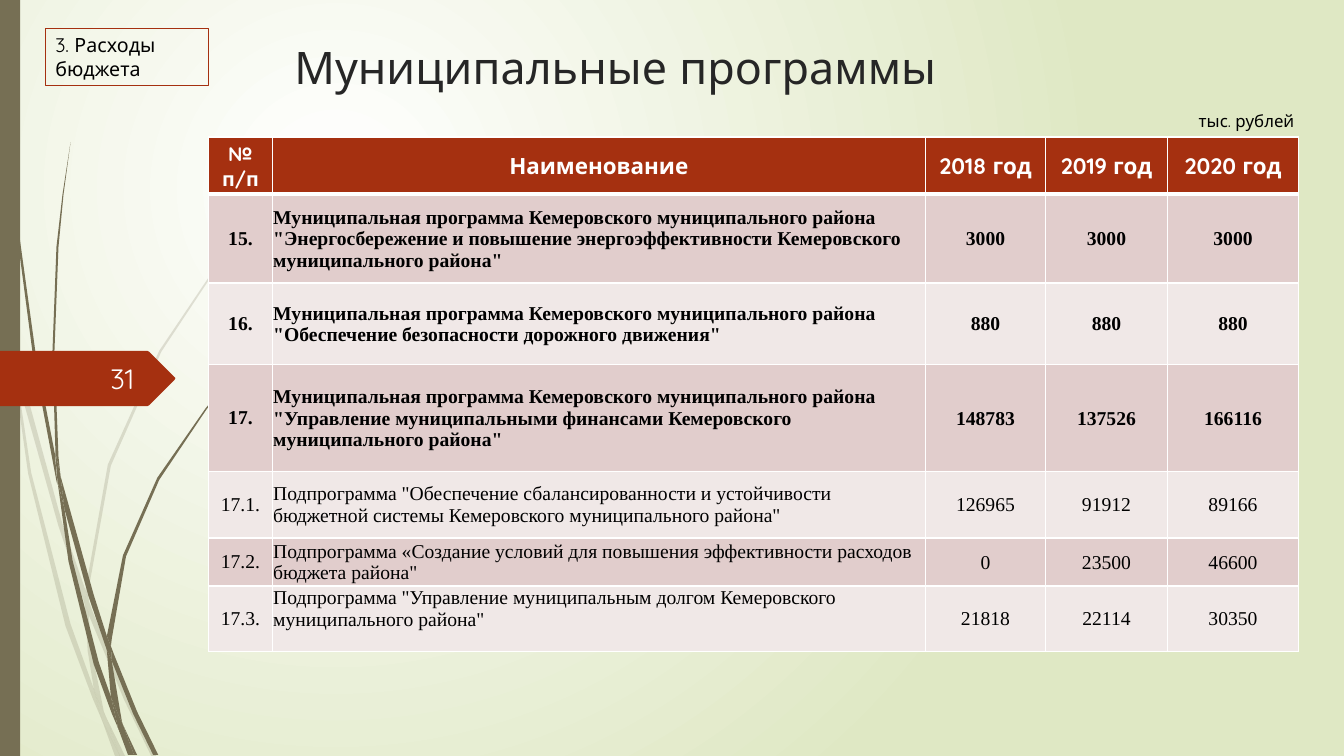
from dataclasses import dataclass

from pptx import Presentation
from pptx import util as u
from pptx.dml.color import RGBColor
from pptx.enum import shapes, text
from pptx.oxml import parse_xml
from pptx.oxml.ns import nsdecls, qn

RUST = RGBColor(0xA5, 0x30, 0x10)
OLIVE = RGBColor(0x76, 0x6F, 0x54)
PALE_GREEN = RGBColor(0xDF, 0xE8, 0xC4)
DARK_BAND = RGBColor(0xE1, 0xCD, 0xCC)
LIGHT_BAND = RGBColor(0xF0, 0xE8, 0xE7)
TITLE_GRAY = RGBColor(0x26, 0x26, 0x26)
WHITE = RGBColor(0xFF, 0xFF, 0xFF)
BLACK = RGBColor(0, 0, 0)
HEADING_FONT, TABLE_FONT = "Quicksand", "Times New Roman"
LEFT, CENTER, RIGHT = text.PP_ALIGN.LEFT, text.PP_ALIGN.CENTER, text.PP_ALIGN.RIGHT
TOP, MIDDLE = text.MSO_ANCHOR.TOP, text.MSO_ANCHOR.MIDDLE
Points = list[tuple[float, float]]


@dataclass
class Style:
    size: float
    color: RGBColor = BLACK
    font: str = HEADING_FONT
    bold: bool = False
    align: text.PP_ALIGN = LEFT
    anchor: text.MSO_ANCHOR = TOP


@dataclass
class Box:
    left: float
    top: float
    width: float
    height: float

    def lengths(self) -> list[u.Length]:
        return [u.Inches(n) for n in (self.left, self.top, self.width, self.height)]


@dataclass
class Grass:
    """A tuft of grass: the outlines of its blade sections and their opacity."""
    sections: list[Points]
    opacity: int = 100


@dataclass
class Program:
    number: str
    name: str
    amounts: tuple[str, str, str]
    height: float
    bold: bool = False
    name_anchor: text.MSO_ANCHOR = MIDDLE


FAINT_GRASS = Grass([
    [(0.11, 3.5), (0.09, 3.22), (0, 2.82), (0, 2.99), (0.1, 3.44)],
    [(0.58, 5.22), (0.84, 5.99), (0.85, 5.86), (0.62, 5.2), (0.14, 3.45), (0.17, 3.76)],
    [(0.92, 6.07), (0.88, 5.96), (0.88, 6.1), (1.23, 6.94), (1.5, 7.5), (1.55, 7.5), (1.27, 6.92)],
    [(1.19, 7.5), (1.24, 7.5), (1.05, 7.11)],
    [(0.93, 6.83), (0.7, 6.19), (0.31, 4.69), (0.17, 3.76), (0.11, 3.5), (0.28, 4.7),
     (0.65, 6.21), (0.92, 6.93), (1.01, 7.14), (0.99, 7.07)],
    [(0.84, 5.99), (0.87, 6.46), (0.93, 6.83), (0.96, 6.92), (1.05, 7.11), (1.03, 7.06),
     (0.91, 6.46), (0.88, 6.1), (0.88, 6.08)],
    [(0.88, 5.84), (1.1, 4.62), (1.6, 3.49), (2.29, 2.45), (2.68, 1.98), (2.9, 1.75), (3.12, 1.54),
     (3.12, 1.53), (2.89, 1.75), (2.68, 1.97), (2.28, 2.44), (1.58, 3.48), (1.07, 4.61),
     (0.85, 5.84), (0.85, 5.86), (0.88, 5.96)],
    [(1.01, 7.14), (1.14, 7.5), (1.19, 7.5)],
    [(0.88, 6.08), (0.88, 6.1), (0.88, 5.96), (0.85, 5.86), (0.84, 5.99)],
    [(0.96, 6.92), (0.93, 6.83), (0.99, 7.07), (1.01, 7.14), (1.19, 7.5), (1.05, 7.11)],
], 20)
DARK_GRASS = Grass([
    [(0.07, 1.1), (0.17, 2.33), (0.33, 3.55), (0.56, 4.77), (0.57, 4.81), (0.55, 4.57), (0.55, 4.53),
     (0.36, 3.55), (0.19, 2.32), (0.08, 1.09), (0.05, 0.48), (0.04, 0), (0.03, 0), (0.04, 0.48)],
    [(0.88, 5.92), (1.06, 6.45), (1.06, 6.33), (1.06, 6.31), (0.93, 5.9), (0.6, 4.72), (0.64, 5.05)],
    [(1.13, 6.49), (1.1, 6.41), (1.11, 6.56), (1.32, 7.08), (1.52, 7.49), (1.57, 7.49), (1.36, 7.06)],
    [(1.1, 6.91), (0.98, 6.57), (0.72, 5.56), (0.64, 5.05), (0.57, 4.77), (0.68, 5.57),
     (0.93, 6.59), (1.11, 7.08), (1.17, 7.22), (1.16, 7.17)],
    [(0.6, 4.72), (0.58, 4.53), (0.54, 3.49), (0.58, 2.45), (0.63, 1.93), (0.7, 1.41),
     (0.62, 1.93), (0.56, 2.45), (0.52, 3.49), (0.55, 4.49)],
    [(1.33, 7.49), (1.36, 7.49), (1.22, 7.19)],
    [(0.57, 4.77), (0.64, 5.05), (0.6, 4.72), (0.55, 4.49), (0.55, 4.53)],
    [(1.11, 6.33), (1.25, 5.52), (1.58, 4.76), (2.05, 4.06), (2.31, 3.74), (2.61, 3.44), (2.6, 3.44),
     (2.31, 3.73), (2.04, 4.05), (1.56, 4.74), (1.22, 5.51), (1.06, 6.31), (1.1, 6.41)],
    [(1.17, 7.22), (1.27, 7.49), (1.31, 7.49)],
    [(1.06, 6.45), (1.1, 6.91), (1.16, 7.06), (1.22, 7.19), (1.21, 7.16), (1.11, 6.56), (1.09, 6.51)],
    [(1.06, 6.45), (1.09, 6.51), (1.11, 6.56), (1.1, 6.41), (1.06, 6.31), (1.06, 6.33)],
    [(1.16, 7.06), (1.1, 6.91), (1.16, 7.17), (1.17, 7.22), (1.3, 7.49), (1.33, 7.49), (1.22, 7.19)],
])
PAGE_TAG = [(0, 3.48), (1.46, 3.48), (1.48, 3.49), (1.73, 3.74), (1.74, 3.75),
            (1.73, 3.77), (1.48, 4.02), (1.46, 4.03), (0, 4.03)]

HEADERS = ["№ п/п", "Наименование", "2018 год", "2019 год", "2020 год"]
HEADER_HEIGHT = 0.41
COLUMN_WIDTHS = [0.63, 6.48, 1.19, 1.21, 1.3]
MUNICIPAL = "Муниципальная программа Кемеровского муниципального района "
PROGRAMS = [
    Program("15.", MUNICIPAL + '"Энергосбережение и повышение энергоэффективности Кемеровского '
            'муниципального района"', ("3000", "3000", "3000"), 0.88, True),
    Program("16.", MUNICIPAL + '"Обеспечение безопасности дорожного движения"',
            ("880", "880", "880"), 0.81, True),
    Program("17.", MUNICIPAL + '"Управление муниципальными финансами Кемеровского '
            'муниципального района"', ("148783", "137526", "166116"), 1.06, True),
    Program("17.1.", 'Подпрограмма "Обеспечение сбалансированности и устойчивости бюджетной '
            'системы Кемеровского муниципального района"', ("126965", "91912", "89166"), 0.66),
    Program("17.2.", 'Подпрограмма «Создание условий для повышения эффективности расходов '
            'бюджета района"', ("0", "23500", "46600"), 0.24),
    Program("17.3.", 'Подпрограмма "Управление муниципальным долгом Кемеровского '
            'муниципального района"', ("21818", "22114", "30350"), 0.65, name_anchor=TOP),
]


def write(frame, words: str, style: Style) -> None:
    frame.word_wrap = True
    frame.vertical_anchor = style.anchor
    paragraph = frame.paragraphs[0]
    paragraph.alignment = style.align
    run = paragraph.add_run()
    run.text = words
    run.font.name, run.font.size, run.font.bold = style.font, u.Pt(style.size), style.bold
    run.font.color.rgb = style.color


def add_text(slide, box: Box, words: str, style: Style, grow: bool = False):
    shape = slide.shapes.add_textbox(*box.lengths())
    write(shape.text_frame, words, style)
    if grow:
        shape.text_frame.auto_size = text.MSO_AUTO_SIZE.SHAPE_TO_FIT_TEXT
    return shape


def paint(shape, color: RGBColor, opacity: int = 100) -> None:
    shape.shadow.inherit = False
    shape.line.fill.background()
    shape.fill.solid()
    shape.fill.fore_color.rgb = color
    if opacity < 100:
        color_element = shape._element.spPr.find(qn("a:solidFill"))[0]
        color_element.append(parse_xml(f'<a:alpha {nsdecls("a")} val="{opacity * 1000}"/>'))


def add_outline(slide, points: Points, color: RGBColor, opacity: int = 100) -> None:
    corners = [(u.Inches(x), u.Inches(y)) for x, y in points]
    builder = slide.shapes.build_freeform(*corners[0])
    builder.add_line_segments(corners[1:], close=True)
    paint(builder.convert_to_shape(), color, opacity)


def set_background(slide) -> None:
    slide.background.fill.solid()
    properties = slide._element.cSld.bg.bgPr
    properties.replace(properties.find(qn("a:solidFill")), parse_xml(
        f'<a:gradFill {nsdecls("a")} rotWithShape="1"><a:gsLst>'
        f'<a:gs pos="0"><a:srgbClr val="{WHITE}"/></a:gs>'
        f'<a:gs pos="100000"><a:srgbClr val="{PALE_GREEN}"/></a:gs></a:gsLst>'
        '<a:path path="circle"><a:fillToRect l="50000" t="50000" r="100000" b="100000"/>'
        '</a:path></a:gradFill>'))


def fill_cell(cell, words: str, style: Style, color: RGBColor, bottom: float = 1, tight: bool = False) -> None:
    """Write and colour a cell with white borders; bottom is a line width in points."""
    write(cell.text_frame, words, style)
    cell.vertical_anchor = style.anchor
    if tight:
        cell.margin_left = cell.margin_right = cell.margin_top = u.Inches(0.01)
        cell.margin_bottom = 0
    cell.fill.solid()
    cell.fill.fore_color.rgb = color
    for index, (side, width) in enumerate([("L", 1), ("R", 1), ("T", 1), ("B", bottom)]):
        cell._tc.tcPr.insert(index, parse_xml(
            f'<a:ln{side} {nsdecls("a")} w="{u.Pt(width)}"><a:solidFill>'
            f'<a:srgbClr val="{WHITE}"/></a:solidFill></a:ln{side}>'))


def add_program_table(slide) -> None:
    heights = [HEADER_HEIGHT] + [program.height for program in PROGRAMS]
    box = Box(2.07, 1.36, sum(COLUMN_WIDTHS), sum(heights))
    table = slide.shapes.add_table(len(heights), len(COLUMN_WIDTHS), *box.lengths()).table
    table.horz_banding = False
    for column, width in zip(table.columns, COLUMN_WIDTHS):
        column.width = u.Inches(width)
    for row, height in zip(table.rows, heights):
        row.height = u.Inches(height)
    for index, header in enumerate(HEADERS):
        style = Style(16 if index else 14, WHITE, bold=True, align=CENTER, anchor=MIDDLE if index else TOP)
        fill_cell(table.cell(0, index), header, style, RUST, bottom=3)
    for row, program in enumerate(PROGRAMS, 1):
        band = DARK_BAND if row % 2 else LIGHT_BAND
        for column, words in enumerate([program.number, program.name, *program.amounts]):
            is_name = column == 1
            style = Style(14, BLACK, TABLE_FONT, program.bold, LEFT if is_name else CENTER,
                          program.name_anchor if is_name else MIDDLE)
            fill_cell(table.cell(row, column), words, style, band, tight=column > 0)


def main() -> None:
    presentation = Presentation()
    presentation.slide_width, presentation.slide_height = u.Inches(13.33), u.Inches(7.5)
    slide = presentation.slides.add_slide(presentation.slide_layouts[5])
    set_background(slide)
    for grass in (FAINT_GRASS, DARK_GRASS):
        for section in grass.sections:
            add_outline(slide, section, OLIVE, grass.opacity)
    side_bar = slide.shapes.add_shape(shapes.MSO_SHAPE.RECTANGLE, *Box(0, 0, 0.2, 7.5).lengths())
    paint(side_bar, OLIVE)
    add_outline(slide, PAGE_TAG, RUST)

    title = slide.shapes.title
    title.left, title.top, title.width, title.height = Box(2.82, 0.28, 9.75, 0.77).lengths()
    write(title.text_frame, "Муниципальные программы", Style(32, TITLE_GRAY, anchor=MIDDLE))
    add_text(slide, Box(0.58, 3.55, 0.85, 0.4), "31", Style(20, WHITE, align=RIGHT, anchor=MIDDLE))
    add_program_table(slide)
    add_text(slide, Box(11.79, 1.05, 1.3, 0.3), "тыс. рублей", Style(12), grow=True)
    section_label = add_text(slide, Box(0.45, 0.28, 1.62, 0.57), "3. Расходы бюджета", Style(14), grow=True)
    section_label.line.color.rgb = RUST
    section_label.line.width = u.Pt(0.75)
    presentation.save("out.pptx")


if __name__ == "__main__":
    main()
